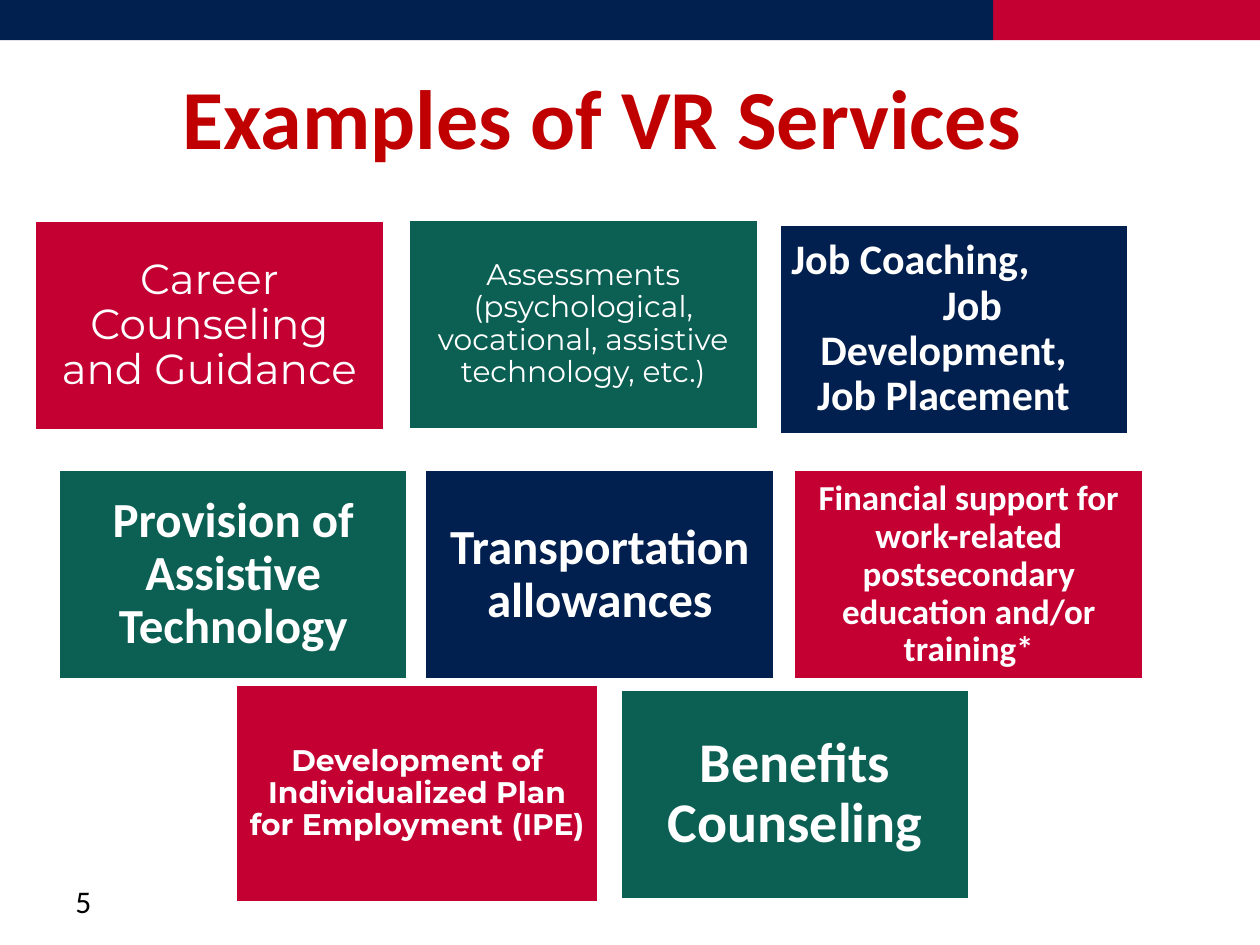
from pptx import Presentation
from pptx.dml.color import RGBColor
from pptx.enum.shapes import MSO_SHAPE
from pptx.enum.text import MSO_ANCHOR, PP_ALIGN
from pptx.util import Cm, Pt

RECTANGLE = MSO_SHAPE.RECTANGLE
TOP, MIDDLE = MSO_ANCHOR.TOP, MSO_ANCHOR.MIDDLE
LEFT, CENTER = PP_ALIGN.LEFT, PP_ALIGN.CENTER

RED = RGBColor(0xC4, 0x00, 0x33)
NAVY = RGBColor(0x01, 0x1F, 0x4F)
GREEN = RGBColor(0x0C, 0x5F, 0x53)
TITLE_RED = RGBColor(0xC0, 0x00, 0x00)
WHITE = RGBColor(0xFF, 0xFF, 0xFF)
BLACK = RGBColor(0x00, 0x00, 0x00)

BODY, DISPLAY = "Calibri", "Montserrat"
PAGE_WIDTH, PAGE_HEIGHT = 25.4, 19.05
BAND_HEIGHT, BAND_SPLIT = 0.81, 20.02
CARD_SIZE = (7.06, 4.24)
PLAN_SIZE = (7.32, 4.42)
INSET_PER_POINT = 1 / 95

TITLE = "Examples of VR Services"
PAGE_NUMBER = "5"
JOB_LINES = ["Job Coaching,", "Job", "Development,", "Job Placement"]
SERVICES = [
    (["Career Counseling and Guidance"], 0.69, 4.45, CARD_SIZE, RED, DISPLAY, 24, False),
    (["Assessments (psychological, vocational, assistive technology, etc.)"],
     8.23, 4.42, CARD_SIZE, GREEN, DISPLAY, 17, False),
    (["Development of Individualized Plan for Employment (IPE)"],
     4.75, 13.79, PLAN_SIZE, RED, DISPLAY, 17, True),
    (JOB_LINES, 15.7, 4.52, CARD_SIZE, NAVY, BODY, 24, True),
    (["Transportation allowances"], 8.56, 9.47, CARD_SIZE, NAVY, BODY, 28, True),
    (["Financial support for work-related postsecondary education and/or training*"],
     16, 9.47, CARD_SIZE, RED, BODY, 20, True),
    (["Provision of Assistive Technology"], 1.17, 9.47, CARD_SIZE, GREEN, BODY, 28, True),
    (["Benefits Counseling"], 12.5, 13.89, CARD_SIZE, GREEN, BODY, 32, True),
]


def add_rectangle(page, left, top, width, height, color):
    box = page.shapes.add_shape(RECTANGLE, Cm(left), Cm(top), Cm(width), Cm(height))
    box.shadow.inherit = False
    box.fill.solid()
    box.fill.fore_color.rgb = color
    box.line.fill.background()
    return box


def write(box, lines, font, size, color, bold, align, anchor):
    frame = box.text_frame
    frame.word_wrap = True
    frame.vertical_anchor = anchor
    frame.text = "\n".join(lines)
    for paragraph in frame.paragraphs:
        paragraph.alignment = align
        for span in paragraph.runs:
            span.font.name = font
            span.font.size = Pt(size)
            span.font.bold = bold
            span.font.color.rgb = color
    return frame


def add_label(page, left, top, width, height, text, *style):
    box = page.shapes.add_textbox(Cm(left), Cm(top), Cm(width), Cm(height))
    write(box, [text], *style)


def add_card(page, lines, left, top, size, color, font, points, bold):
    card = add_rectangle(page, left, top, *size, color)
    card.line.color.rgb = WHITE
    card.line.width = Pt(2)
    frame = write(card, lines, font, points, WHITE, bold, CENTER, MIDDLE)
    inset = Cm(points * INSET_PER_POINT)
    frame.margin_left = frame.margin_right = inset
    frame.margin_top = frame.margin_bottom = inset
    for paragraph in frame.paragraphs:
        paragraph.line_spacing = 0.9
    return frame


def stagger(frame):
    coaching, job, development, _ = frame.paragraphs
    coaching.alignment = LEFT
    for paragraph, side, indent in ((job, "marL", 0.75), (development, "marR", 0.42)):
        paragraph._p.get_or_add_pPr().set(side, str(Cm(indent)))


def main():
    deck = Presentation()
    deck.slide_width, deck.slide_height = Cm(PAGE_WIDTH), Cm(PAGE_HEIGHT)
    page = deck.slides.add_slide(deck.slide_layouts[6])
    add_rectangle(page, BAND_SPLIT, 0, PAGE_WIDTH - BAND_SPLIT, BAND_HEIGHT, RED)
    add_rectangle(page, 0, 0, BAND_SPLIT, BAND_HEIGHT, NAVY)
    add_label(page, 1.27, 17.65, 5.92, 1.02, PAGE_NUMBER, BODY, 18, BLACK, False, LEFT, TOP)
    add_label(page, 0.71, 1.14, 22.86, 2.41, TITLE, BODY, 48, TITLE_RED, True, CENTER, MIDDLE)
    for service in SERVICES:
        frame = add_card(page, *service)
        if service[0] is JOB_LINES:
            stagger(frame)
    deck.save("out.pptx")


if __name__ == "__main__":
    main()
